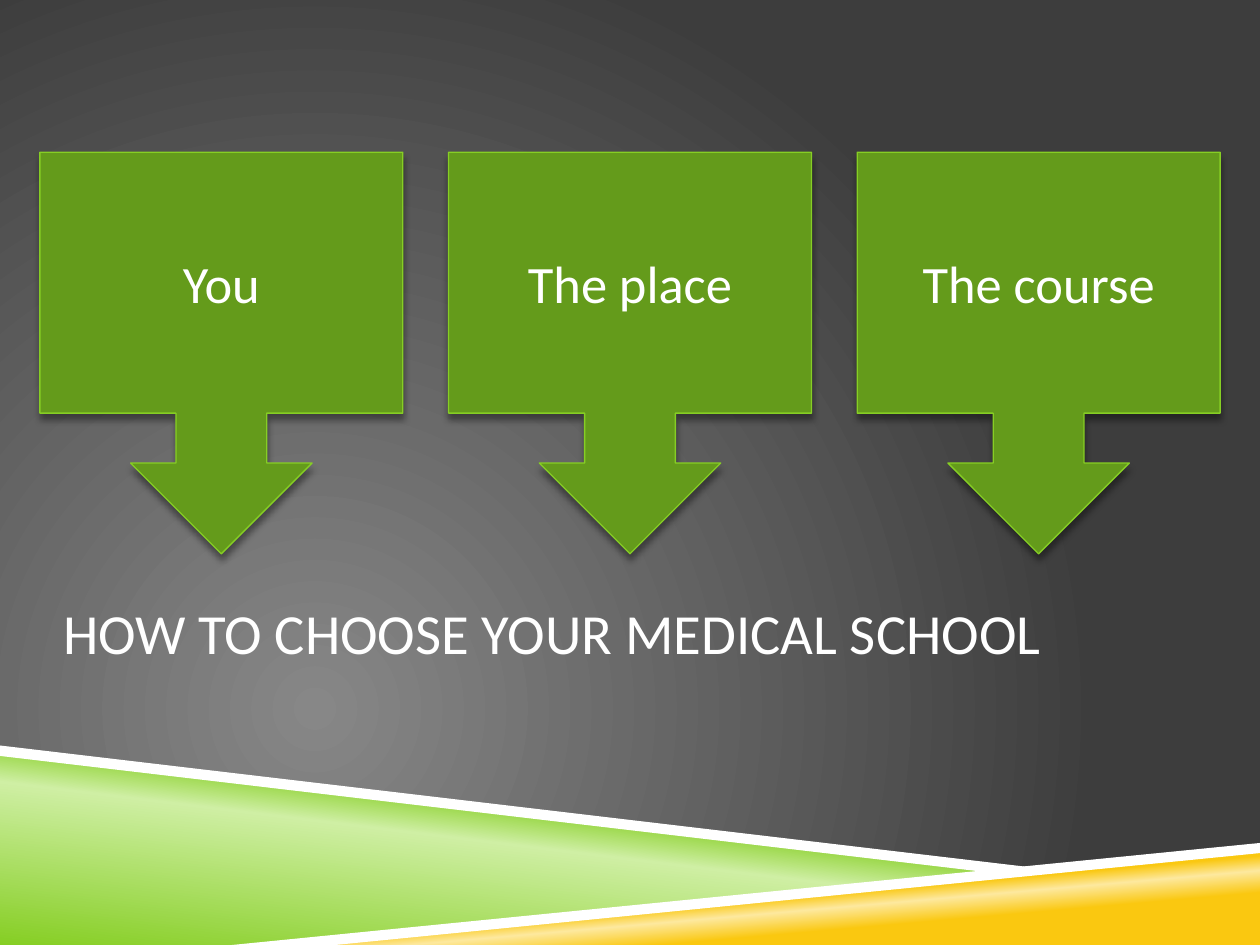
from pptx import Presentation
from pptx.dml.color import RGBColor
from pptx.enum.shapes import MSO_SHAPE
from pptx.enum.text import MSO_ANCHOR, MSO_AUTO_SIZE, PP_ALIGN
from pptx.oxml import parse_xml
from pptx.oxml.ns import nsdecls, qn
from pptx.util import Pt

CALLOUT = MSO_SHAPE.DOWN_ARROW_CALLOUT
MIDDLE = MSO_ANCHOR.MIDDLE
LEFT, CENTER = PP_ALIGN.LEFT, PP_ALIGN.CENTER

WHITE = RGBColor(0xFF, 0xFF, 0xFF)
LIGHT_GREY = RGBColor(0x87, 0x87, 0x87)
DARK_GREY = RGBColor(0x3D, 0x3D, 0x3D)
GREEN = RGBColor(0x86, 0xCE, 0x24)
PALE_GREEN = RGBColor(0xCF, 0xEF, 0xA4)
DEEP_GREEN = RGBColor(0x64, 0x9B, 0x1B)
YELLOW = RGBColor(0xFA, 0xC8, 0x10)
PALE_YELLOW = RGBColor(0xFD, 0xE9, 0x9F)
FONT = "Calibri"

# Content
TITLE = "HOW TO CHOOSE YOUR MEDICAL SCHOOL"
FACTORS = ["You", "The place", "The course"]

# Layout, in points
SLIDE_W, SLIDE_H = 720, 540
TITLE_BOX = (36, 316, 648, 90)
CALLOUT_W, CALLOUT_H = 207.4, 229.5
CALLOUT_TOP, MARGIN = 87, 22.8

# Decorative bands: outline, gradient stops, gradient angle
GRADIENT_BANDS = [
    ([(0, 430), (570, 498), (144, 540), (0, 540)],
     [(0, GREEN), (52, PALE_GREEN), (66, GREEN)], 277),
    ([(142.5, 540), (720, 484), (720, 540)],
     [(28, YELLOW), (40, PALE_YELLOW), (48, YELLOW)], 265),
]
WHITE_BANDS = [
    [(0, 426), (0, 432), (569, 499), (599, 496.8)],
    [(720, 481.7), (132.5, 540), (191.5, 540), (720, 487.5)],
]


def set_gradient(element, stops, direction):
    """Replace the default gradient inside element with the given stops."""
    gradient = element.find(".//" + qn("a:gradFill"))
    for child in list(gradient):
        gradient.remove(child)
    stop_xml = "".join(
        f'<a:gs pos="{position * 1000}"><a:srgbClr val="{color}"/></a:gs>'
        for position, color in stops)
    gradient.append(parse_xml(f'<a:gsLst {nsdecls("a")}>{stop_xml}</a:gsLst>'))
    gradient.append(parse_xml(direction))


def add_band(slide, points):
    corners = [(Pt(x), Pt(y)) for x, y in points]
    builder = slide.shapes.build_freeform(*corners[0])
    builder.add_line_segments(corners[1:], close=True)
    band = builder.convert_to_shape()
    band.shadow.inherit = False
    band.line.fill.background()
    return band


def add_text(paragraph, text, size, alignment):
    paragraph.alignment = alignment
    run = paragraph.add_run()
    run.text = text
    run.font.name = FONT
    run.font.size = Pt(size)
    run.font.color.rgb = WHITE


def add_callout(slide, factor, left):
    callout = slide.shapes.add_shape(
        CALLOUT, Pt(left), Pt(CALLOUT_TOP), Pt(CALLOUT_W), Pt(CALLOUT_H))
    callout.fill.solid()
    callout.fill.fore_color.rgb = DEEP_GREEN
    callout.line.color.rgb = GREEN
    callout.line.width = Pt(0.75)
    callout._element.spPr.append(parse_xml(
        f'<a:effectLst {nsdecls("a")}>'
        f'<a:outerShdw blurRad="{Pt(4)}" dist="{Pt(3.3)}" dir="5400000" rotWithShape="0">'
        '<a:srgbClr val="000000"><a:alpha val="40000"/></a:srgbClr>'
        '</a:outerShdw></a:effectLst>'))
    frame = callout.text_frame
    frame.word_wrap = True
    frame.vertical_anchor = MIDDLE
    add_text(frame.paragraphs[0], factor, 30, CENTER)


def main():
    prs = Presentation()
    prs.slide_width, prs.slide_height = Pt(SLIDE_W), Pt(SLIDE_H)
    slide = prs.slides.add_slide(prs.slide_layouts[5])

    # Background glow from the lower left
    slide.background.fill.gradient()
    set_gradient(
        slide._element, [(0, LIGHT_GREY), (100, DARK_GREY)],
        f'<a:path {nsdecls("a")} path="circle">'
        '<a:fillToRect l="50000" t="100000" r="100000" b="50000"/></a:path>')

    # Bands along the bottom
    for points, stops, angle in GRADIENT_BANDS:
        band = add_band(slide, points)
        band.fill.gradient()
        set_gradient(band._element, stops,
                     f'<a:lin {nsdecls("a")} ang="{angle * 60000}" scaled="0"/>')
    for points in WHITE_BANDS:
        band = add_band(slide, points)
        band.fill.solid()
        band.fill.fore_color.rgb = WHITE

    # Title, in front of the bands
    title = slide.shapes.title
    slide.shapes._spTree.append(title._element)
    title.left, title.top, title.width, title.height = map(Pt, TITLE_BOX)
    frame = title.text_frame
    frame.auto_size = MSO_AUTO_SIZE.NONE
    frame.word_wrap = True
    frame.vertical_anchor = MIDDLE
    frame.margin_left = frame.margin_right = 0
    frame.margin_top = frame.margin_bottom = Pt(3.6)
    add_text(frame.paragraphs[0], TITLE, 32.4, LEFT)

    # Callouts spread evenly between the margins
    pitch = (SLIDE_W - 2 * MARGIN - CALLOUT_W) / (len(FACTORS) - 1)
    for index, factor in enumerate(FACTORS):
        add_callout(slide, factor, MARGIN + index * pitch)

    prs.save("out.pptx")


if __name__ == "__main__":
    main()
